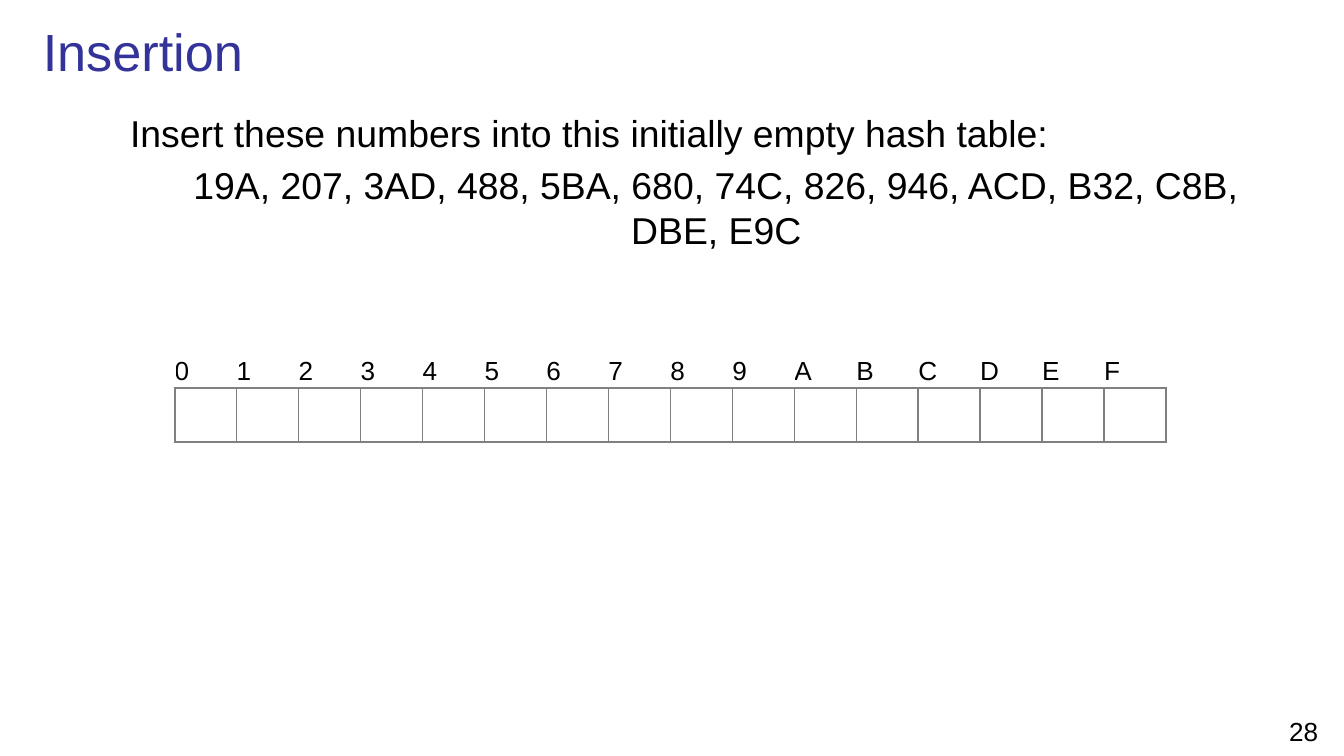
from dataclasses import dataclass

from lxml.etree import SubElement
from pptx import Presentation
from pptx.dml.color import RGBColor
from pptx.enum.text import MSO_ANCHOR as Anchor, PP_ALIGN as Align
from pptx.oxml.ns import qn
from pptx.util import Inches, Pt


@dataclass(frozen=True)
class Theme:
    font: str = "Arial"
    title_color: str = "333399"
    text_color: str = "000000"
    border_color: str = "808080"
    title_size: int = 28
    body_size: int = 20
    label_size: int = 14
    border_width: int = 1


THEME = Theme()
WIDTH = 10
HEIGHT = WIDTH * 9 / 16
SLOTS = "0123456789ABCDEF"
TABLE_WIDTH = 7.38
LABEL_HEIGHT, SLOT_HEIGHT = 0.25, 0.4


def across(percent):
    return Inches(WIDTH * percent / 100)


def down(percent):
    return Inches(HEIGHT * percent / 100)


def format_paragraph(paragraph, size, color=THEME.text_color, align=Align.LEFT):
    paragraph.alignment = align
    for run in paragraph.runs:
        run.font.name = THEME.font
        run.font.size = Pt(size)
        run.font.color.rgb = RGBColor.from_string(color)


def add_text(slide, left, top, width, height, text, anchor=Anchor.TOP):
    box = slide.shapes.add_textbox(across(left), down(top), across(width), down(height))
    frame = box.text_frame
    frame.word_wrap = True
    frame.vertical_anchor = anchor
    frame.text = text
    return frame.paragraphs


def indent_paragraph(paragraph, indent):
    paragraph.space_before = Pt(THEME.body_size * 0.2)
    properties = paragraph._p.get_or_add_pPr()
    properties.set("marL", str(Inches(indent)))
    properties.set("indent", "0")


def add_borders(cell, sides):
    properties = cell._tc.get_or_add_tcPr()
    for side in sides:
        line = SubElement(properties, qn(f"a:ln{side}"), w=str(Pt(THEME.border_width)))
        fill = SubElement(line, qn("a:solidFill"))
        SubElement(fill, qn("a:srgbClr"), val=THEME.border_color)


def format_cell(cell, sides):
    cell.margin_left = cell.margin_right = 0
    cell.margin_top = cell.margin_bottom = 0
    cell.vertical_anchor = Anchor.MIDDLE
    add_borders(cell, sides)
    cell.fill.background()


def add_hash_table(slide, left, top):
    table = slide.shapes.add_table(
        2, len(SLOTS), across(left), down(top),
        Inches(TABLE_WIDTH), Inches(LABEL_HEIGHT + SLOT_HEIGHT)).table
    table.first_row = table.horz_banding = False
    table.rows[0].height = Inches(LABEL_HEIGHT)
    table.rows[1].height = Inches(SLOT_HEIGHT)
    for column, label in enumerate(SLOTS):
        table.columns[column].width = Inches(TABLE_WIDTH / len(SLOTS))
        label_cell, slot_cell = table.cell(0, column), table.cell(1, column)
        label_cell.text = label
        format_paragraph(label_cell.text_frame.paragraphs[0], THEME.label_size)
        format_cell(label_cell, "B")
        format_cell(slot_cell, "LRTB")


def main():
    presentation = Presentation()
    presentation.slide_width = Inches(WIDTH)
    presentation.slide_height = Inches(HEIGHT)
    slide = presentation.slides.add_slide(presentation.slide_layouts[6])

    number, = add_text(slide, 94, 93.7, 6, 5.3, "28")
    format_paragraph(number, THEME.label_size, align=Align.CENTER)

    title, = add_text(slide, 2.2, 1.4, 97.4, 10.5, "Insertion", Anchor.MIDDLE)
    format_paragraph(title, THEME.title_size, THEME.title_color)

    task, keys = add_text(
        slide, 4.4, 13.7, 91.6, 77.9,
        "Insert these numbers into this initially empty hash table:\n"
        "19A, 207, 3AD, 488, 5BA, 680, 74C, 826, 946, ACD, B32, C8B, DBE, E9C")
    format_paragraph(task, THEME.body_size)
    format_paragraph(keys, THEME.body_size, align=Align.CENTER)
    indent_paragraph(task, 0.43)
    indent_paragraph(keys, 0.62)

    add_hash_table(slide, 13, 46.9)
    presentation.save("out.pptx")


if __name__ == "__main__":
    main()
